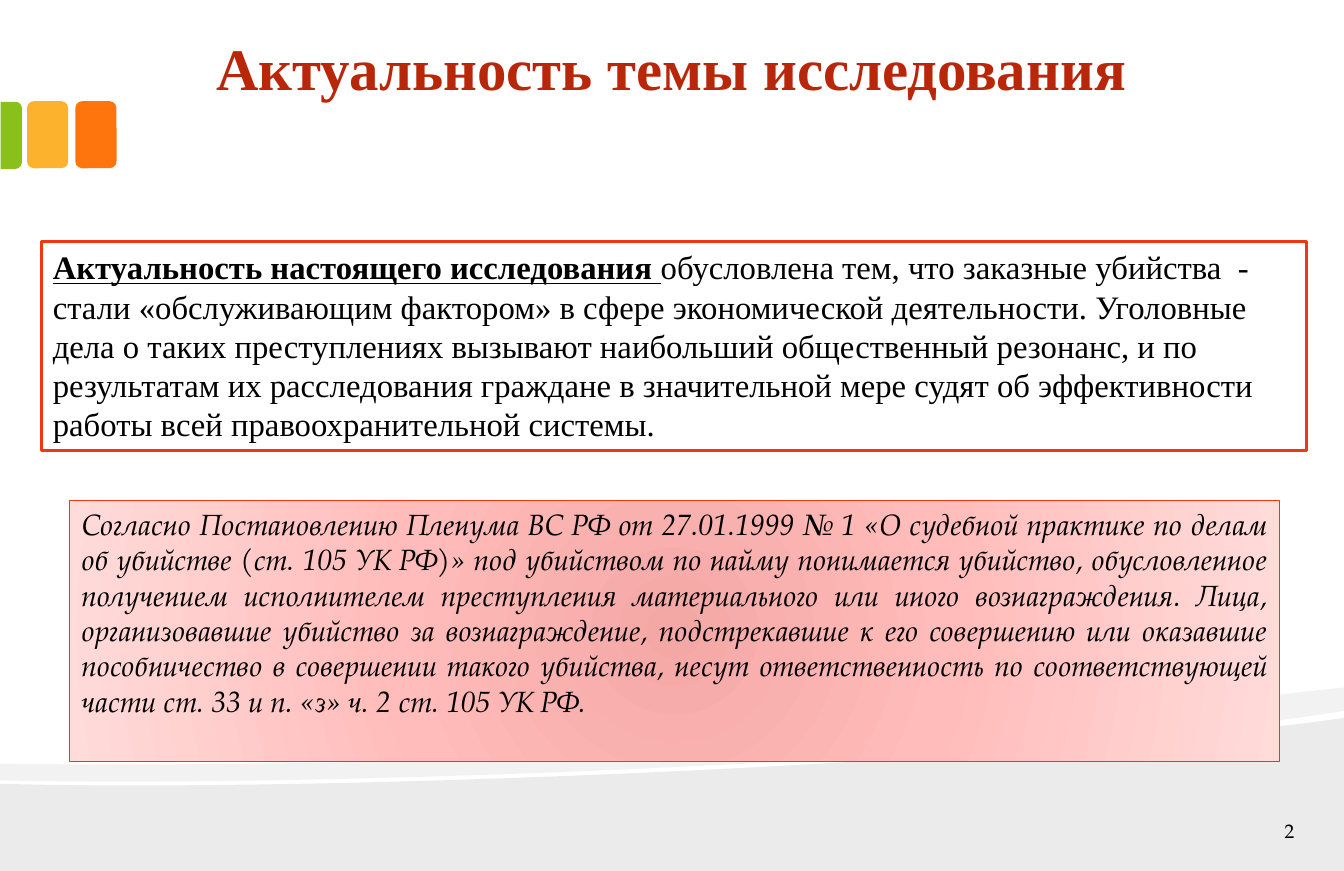
from dataclasses import dataclass

from lxml import etree
from pptx import Presentation
from pptx import util as u
from pptx.dml.color import RGBColor
from pptx.enum import shapes, text
from pptx.oxml import ns, parse_xml

WIDTH, HEIGHT = 11.42, 7.4


@dataclass(frozen=True)
class Theme:
    serif: str = "Times New Roman"
    accent_font: str = "TeX Gyre Pagella"
    title_color: str = "B8270A"
    ink: str = "000000"
    paper: str = "FFFFFF"
    frame: str = "F23610"
    green: str = "89C01C"
    yellow: str = "FCB22C"
    orange: str = "FE750E"
    glow: tuple = ((0, "F4A8A6"), (45, "FFBCBA"), (100, "FFDBDA"))
    title_size: int = 36
    thesis_size: int = 20
    ruling_size: int = 18
    number_size: int = 12


THEME = Theme()

THESIS_LEAD = "Актуальность настоящего исследования "
THESIS = (
    "обусловлена тем, что заказные убийства  - стали «обслуживающим фактором» "
    "в сфере экономической деятельности. Уголовные дела о таких преступлениях "
    "вызывают наибольший общественный резонанс, и по результатам их расследования "
    "граждане в значительной мере судят об эффективности работы всей "
    "правоохранительной системы."
)
RULING = (
    "Согласно Постановлению Пленума ВС РФ от 27.01.1999 № 1 «О судебной практике "
    "по делам об убийстве (ст. 105 УК РФ)» под убийством по найму понимается "
    "убийство, обусловленное получением исполнителем преступления материального "
    "или иного вознаграждения. Лица, организовавшие убийство за вознаграждение, "
    "подстрекавшие к его совершению или оказавшие пособничество в совершении "
    "такого убийства, несут ответственность по соответствующей части ст. 33 "
    "и п. «з» ч. 2 ст. 105 УК РФ."
)


def inches(values):
    return [u.Inches(value) for value in values]


def paint(shape, color):
    shape.shadow.inherit = False
    shape.fill.solid()
    shape.fill.fore_color.rgb = RGBColor.from_string(color)
    shape.line.fill.background()


def curve(start, control_1, control_2, end, steps=24):
    """Return points along a cubic Bezier curve, both ends included."""
    points = []
    for step in range(steps + 1):
        t = step / steps
        weights = ((1 - t) ** 3, 3 * t * (1 - t) ** 2, 3 * t * t * (1 - t), t ** 3)
        corners = (start, control_1, control_2, end)
        points.append(tuple(sum(w * c[axis] for w, c in zip(weights, corners))
                            for axis in (0, 1)))
    return points


def add_wave(slide, points, opacity):
    outline = [inches(point) for point in points]
    builder = slide.shapes.build_freeform(*outline[0])
    builder.add_line_segments(outline[1:], close=True)
    wave = builder.convert_to_shape()
    paint(wave, THEME.ink)
    color = wave.fill._xPr.find(".//" + ns.qn("a:srgbClr"))
    etree.SubElement(color, ns.qn("a:alpha"), val=str(opacity * 1000))


def add_bar(slide, kind, box, color):
    bar = slide.shapes.add_shape(kind, *inches(box))
    paint(bar, color)
    return bar


def add_panel(slide, box, line_width):
    panel = slide.shapes.add_shape(shapes.MSO_SHAPE.RECTANGLE, *inches(box))
    paint(panel, THEME.paper)
    panel.line.color.rgb = RGBColor.from_string(THEME.frame)
    panel.line.width = u.Pt(line_width)
    return panel


def fill_radially(shape, stops):
    gradient = "".join(
        f'<a:gs pos="{position * 1000}"><a:srgbClr val="{color}"/></a:gs>'
        for position, color in stops)
    solid = shape.fill._xPr.find(ns.qn("a:solidFill"))
    solid.getparent().replace(solid, parse_xml(
        f'<a:gradFill {ns.nsdecls("a")} rotWithShape="1"><a:gsLst>{gradient}</a:gsLst>'
        '<a:path path="circle"><a:fillToRect l="50000" t="50000" r="50000" b="50000"/>'
        '</a:path></a:gradFill>'))


def set_frame(shape, anchor, alignment, margins=(0.1, 0.05)):
    """Prepare the text frame and return its first paragraph."""
    frame = shape.text_frame
    frame.word_wrap = True
    frame.auto_size = text.MSO_AUTO_SIZE.NONE
    frame.vertical_anchor = anchor
    frame.margin_left = frame.margin_right = u.Inches(margins[0])
    frame.margin_top = frame.margin_bottom = u.Inches(margins[1])
    paragraph = frame.paragraphs[0]
    paragraph.alignment = alignment
    return paragraph


def add_run(paragraph, words, size, font, color=THEME.ink,
            bold=False, italic=False, underline=False):
    run = paragraph.add_run()
    run.text = words
    run.font.size = u.Pt(size)
    run.font.name = font
    run.font.color.rgb = RGBColor.from_string(color)
    run.font.bold, run.font.italic, run.font.underline = bold, italic, underline


def add_backdrop(slide):
    add_wave(slide, [(WIDTH, HEIGHT), (0, HEIGHT)] + curve(
        (0, 6.66), (3.01, 6.74), (8.93, 6.46), (WIDTH, 6.1)), 8)
    add_wave(slide, [(WIDTH, 5.84)]
             + curve((WIDTH, 6.04), (10.75, 6.15), (9.84, 6.24), (8.81, 6.33))
             + curve((8.81, 6.33), (5.98, 6.55), (2.21, 6.68), (0, 6.63))
             + curve((0, 6.49), (5.59, 6.54), (8.32, 6.18), (WIDTH, 5.84)), 5)

    rounded = shapes.MSO_SHAPE.ROUNDED_RECTANGLE
    for left, color in ((0.64, THEME.orange), (0.23, THEME.yellow)):
        add_bar(slide, rounded, (left, 0.86, 0.35, 0.57), color)
    edge_bar = add_bar(slide, shapes.MSO_SHAPE.ROUND_2_SAME_RECTANGLE,
                       (-0.19, 1.06, 0.57, 0.18), THEME.green)
    edge_bar.rotation = 90
    edge_bar.adjustments[0] = 0.29


def add_title(slide):
    title = slide.shapes.title
    title.left, title.top, title.width, title.height = inches((1.14, 0.16, 9.13, 0.78))
    paragraph = set_frame(title, text.MSO_ANCHOR.BOTTOM, text.PP_ALIGN.CENTER, (0.13, 0.07))
    add_run(paragraph, "Актуальность темы исследования", THEME.title_size,
            THEME.serif, THEME.title_color, bold=True)


def add_slide_number(slide):
    box = slide.shapes.add_textbox(*inches((10.37, 6.96, 0.76, 0.2)))
    paragraph = set_frame(box, text.MSO_ANCHOR.MIDDLE, text.PP_ALIGN.RIGHT, (0.13, 0.07))
    add_run(paragraph, "2", THEME.number_size, THEME.accent_font)


def main():
    presentation = Presentation()
    presentation.slide_width, presentation.slide_height = inches((WIDTH, HEIGHT))
    slide = presentation.slides.add_slide(presentation.slide_layouts.get_by_name("Title Only"))

    add_backdrop(slide)
    add_title(slide)
    add_slide_number(slide)

    ruling = add_panel(slide, (0.59, 4.25, 10.28, 2.22), 0.75)
    fill_radially(ruling, THEME.glow)
    paragraph = set_frame(ruling, text.MSO_ANCHOR.TOP, text.PP_ALIGN.JUSTIFY)
    add_run(paragraph, RULING, THEME.ruling_size, THEME.accent_font, italic=True)

    thesis = add_panel(slide, (0.35, 2.05, 10.75, 1.78), 2)
    paragraph = set_frame(thesis, text.MSO_ANCHOR.TOP, text.PP_ALIGN.LEFT)
    add_run(paragraph, THESIS_LEAD, THEME.thesis_size, THEME.serif, bold=True, underline=True)
    add_run(paragraph, THESIS, THEME.thesis_size, THEME.serif)

    presentation.save("out.pptx")


if __name__ == "__main__":
    main()
